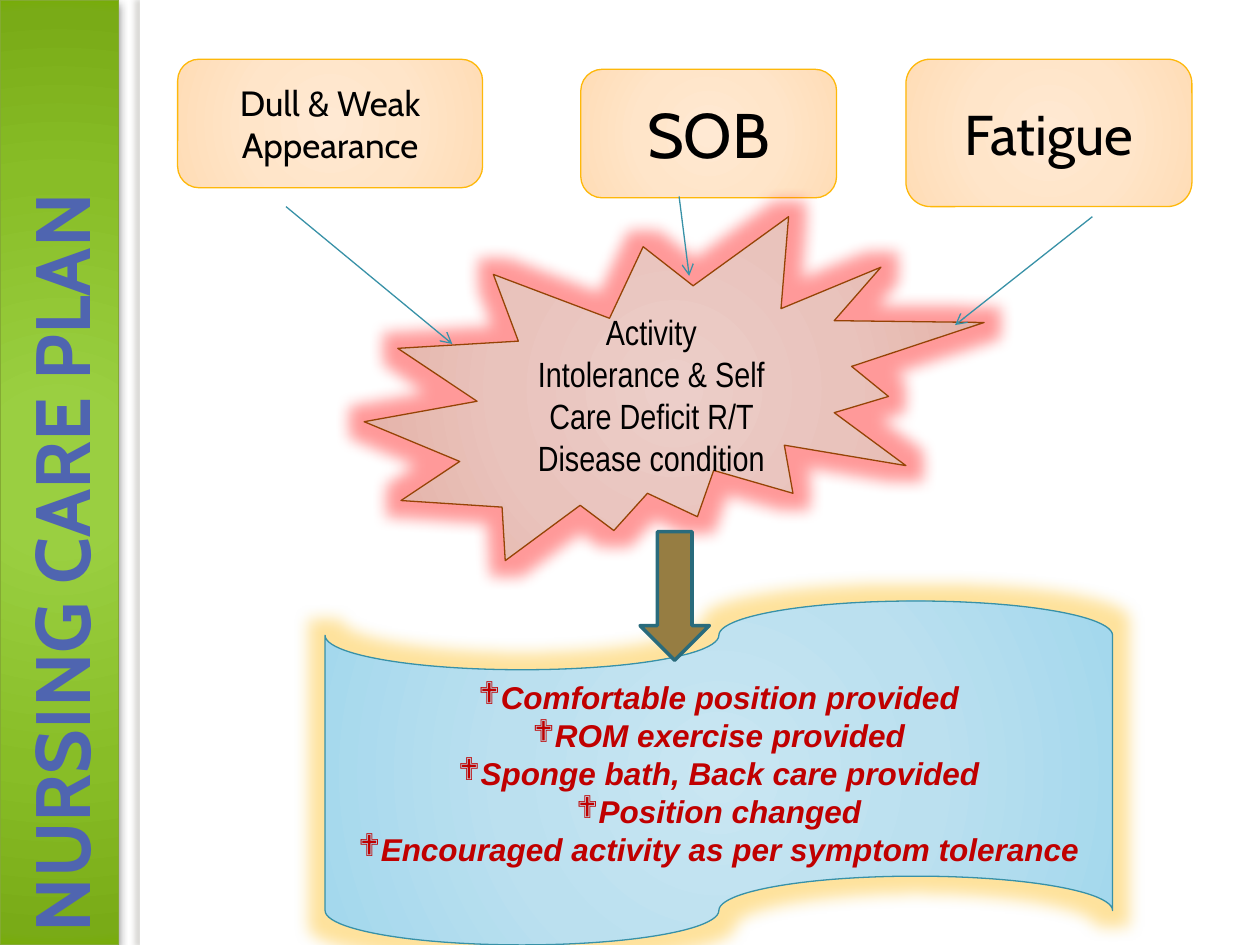
from lxml.etree import SubElement
from pptx import Presentation
from pptx.dml.color import RGBColor
from pptx.enum.shapes import MSO_CONNECTOR, MSO_SHAPE
from pptx.enum.text import MSO_ANCHOR, MSO_AUTO_SIZE, PP_ALIGN
from pptx.oxml import parse_xml
from pptx.oxml.ns import nsdecls, qn
from pptx.util import Inches, Pt

PEACH = [(0, "FFE9D3"), (50, "FFE5C9"), (97, "FFDDB7"), (100, "FFDBB2")]
ROSE = [(0, "ECCEC9"), (50, "E9C3BC"), (97, "E4AFA4"), (100, "E4A89B")]
SKY = [(0, "C9E6F2"), (50, "BBE0EF"), (97, "A4D8ED"), (100, "9BD7EE")]
GREEN = [(0, "9AD041"), (15, "9ACF41"), (62, "88BD27"), (97, "79AB17"), (100, "77AC08")]
GOLD, TEAL = "FEB80A", "3891A7"


def color(value):
    return RGBColor.from_string(value)


class SlideBuilder:
    def __init__(self, page):
        self.page = page

    def paint(self, shape, fill, line=None, width=0.75):
        """Fill with one colour, or with a list of radial gradient stops."""
        shape.fill.solid()
        if isinstance(fill, str):
            shape.fill.fore_color.rgb = color(fill)
        else:
            stops = "".join(
                f'<a:gs pos="{pos * 1000}"><a:srgbClr val="{value}"/></a:gs>'
                for pos, value in fill)
            gradient = parse_xml(
                f'<a:gradFill {nsdecls("a")} rotWithShape="1"><a:gsLst>{stops}</a:gsLst>'
                '<a:path path="circle"><a:fillToRect l="50000" t="50000" r="50000" b="50000"/>'
                '</a:path></a:gradFill>')
            properties = shape._element.spPr
            properties.replace(properties.find(qn("a:solidFill")), gradient)
        if line:
            shape.line.color.rgb = color(line)
            shape.line.width = Pt(width)
        else:
            shape.line.fill.background()
        shape.shadow.inherit = False

    def effect(self, shape, kind, value, alpha, **settings):
        effects = shape._element.spPr.find(qn("a:effectLst"))
        item = SubElement(effects, qn(f"a:{kind}"),
                          {name: str(int(number)) for name, number in settings.items()})
        tint = SubElement(item, qn("a:srgbClr"), val=value)
        SubElement(tint, qn("a:alpha"), val=str(alpha * 1000))

    def shadow(self, shape, value, alpha, blur, distance, angle):
        self.effect(shape, "outerShdw", value, alpha, blurRad=Pt(blur),
                    dist=Pt(distance), dir=angle * 60000, rotWithShape=0)

    def glow(self, shape, value):
        self.effect(shape, "glow", value, 40, rad=Pt(18))

    def shape(self, kind, left, top, width, height, fill, line=None, weight=0.75):
        box = self.page.shapes.add_shape(
            kind, Inches(left), Inches(top), Inches(width), Inches(height))
        self.paint(box, fill, line, weight)
        return box

    def text(self, box, lines, size, font, value="000000", align=PP_ALIGN.CENTER,
             bold=False, italic=False, bullet=None):
        frame = box.text_frame
        frame.word_wrap = True
        frame.auto_size = MSO_AUTO_SIZE.NONE
        frame.vertical_anchor = MSO_ANCHOR.MIDDLE
        frame.text = "\n".join(lines)
        for para in frame.paragraphs:
            para.alignment = align
            para.font.name = font
            para.font.size = Pt(size)
            para.font.color.rgb = color(value)
            para.font.bold = bold
            para.font.italic = italic
            if bullet:
                properties = para._p.get_or_add_pPr()
                properties.set("marL", "0")
                properties.set("indent", "0")
                properties.insert(0, parse_xml(
                    f'<a:buFont {nsdecls("a")} typeface="Wingdings" charset="2"/>'))
                properties.insert(1, parse_xml(
                    f'<a:buChar {nsdecls("a")} char="{bullet}"/>'))

    def side_title(self, words, left, top, width, height):
        """Turn the title a quarter left, so that it fills an upright band."""
        box = self.page.shapes.title
        box.left = Inches(left + (width - height) / 2)
        box.top = Inches(top + (height - width) / 2)
        box.width, box.height = Inches(height), Inches(width)
        box.rotation = 270
        self.paint(box, GREEN, "84AA33")
        self.shadow(box, "000000", 43, 5, 2, 90)
        self.text(box, [words], 44, "Cabin", "4F65B0", PP_ALIGN.LEFT, bold=True)

    def arrow(self, start, end):
        line = self.page.shapes.add_connector(
            MSO_CONNECTOR.STRAIGHT, *(Inches(value) for value in start + end))
        line.line.color.rgb = color(TEAL)
        line.line.width = Pt(0.75)
        SubElement(line.line._get_or_add_ln(), qn("a:tailEnd"), type="arrow")
        SubElement(line._element.spPr, qn("a:effectLst"))


def main():
    deck = Presentation()
    deck.slide_width, deck.slide_height = Inches(10), Inches(7.5)
    builder = SlideBuilder(deck.slides.add_slide(deck.slide_layouts[5]))

    # Side band with the title, and the strip next to it
    strip = builder.shape(MSO_SHAPE.RECTANGLE, 1.11, 0, 0.08, 7.5, "FFFFFF")
    builder.shadow(strip, "736F63", 25, 3, 3, 180)
    builder.side_title("NURSING CARE PLAN", 0, 0, 0.94, 7.5)

    # Symptoms
    symptoms = [
        (["Dull & Weak", "Appearance"], 20, 1.41, 0.47, 2.42, 1.02),
        (["SOB"], 36, 4.61, 0.55, 2.03, 1.02),
        (["Fatigue"], 32, 7.19, 0.47, 2.27, 1.17),
    ]
    for lines, size, *place in symptoms:
        box = builder.shape(MSO_SHAPE.ROUNDED_RECTANGLE, *place, PEACH, GOLD)
        builder.text(box, lines, size, "Cabin")

    # Nursing diagnosis
    burst = builder.shape(MSO_SHAPE.EXPLOSION2, 2.89, 1.72, 4.92, 2.73, ROSE, "964305")
    builder.glow(burst, "FF0000")
    builder.text(burst, ["Activity Intolerance & Self Care Deficit R/T Disease condition"],
                 20, "Arial Narrow")

    # Care given
    tape = builder.shape(MSO_SHAPE.FLOWCHART_PUNCHED_TAPE, 2.58, 4.77, 6.25, 2.73, SKY, TEAL)
    builder.glow(tape, GOLD)
    care = [
        "Comfortable position provided",
        "ROM exercise provided",
        "Sponge bath, Back care provided",
        "Position changed",
        "Encouraged activity as per symptom tolerance",
    ]
    builder.text(tape, care, 18, "Arial", "C00000", bold=True, italic=True, bullet="❖")

    # Arrows from symptoms to diagnosis, and on to care
    for start, end in [((2.27, 1.64), (3.59, 2.73)),
                       ((8.67, 1.72), (7.58, 2.58)),
                       ((5.39, 1.56), (5.47, 2.19))]:
        builder.arrow(start, end)
    builder.shape(MSO_SHAPE.DOWN_ARROW, 5.08, 4.22, 0.55, 1.02, "967D42", "296B7C", 2)

    deck.save("out.pptx")


if __name__ == "__main__":
    main()
